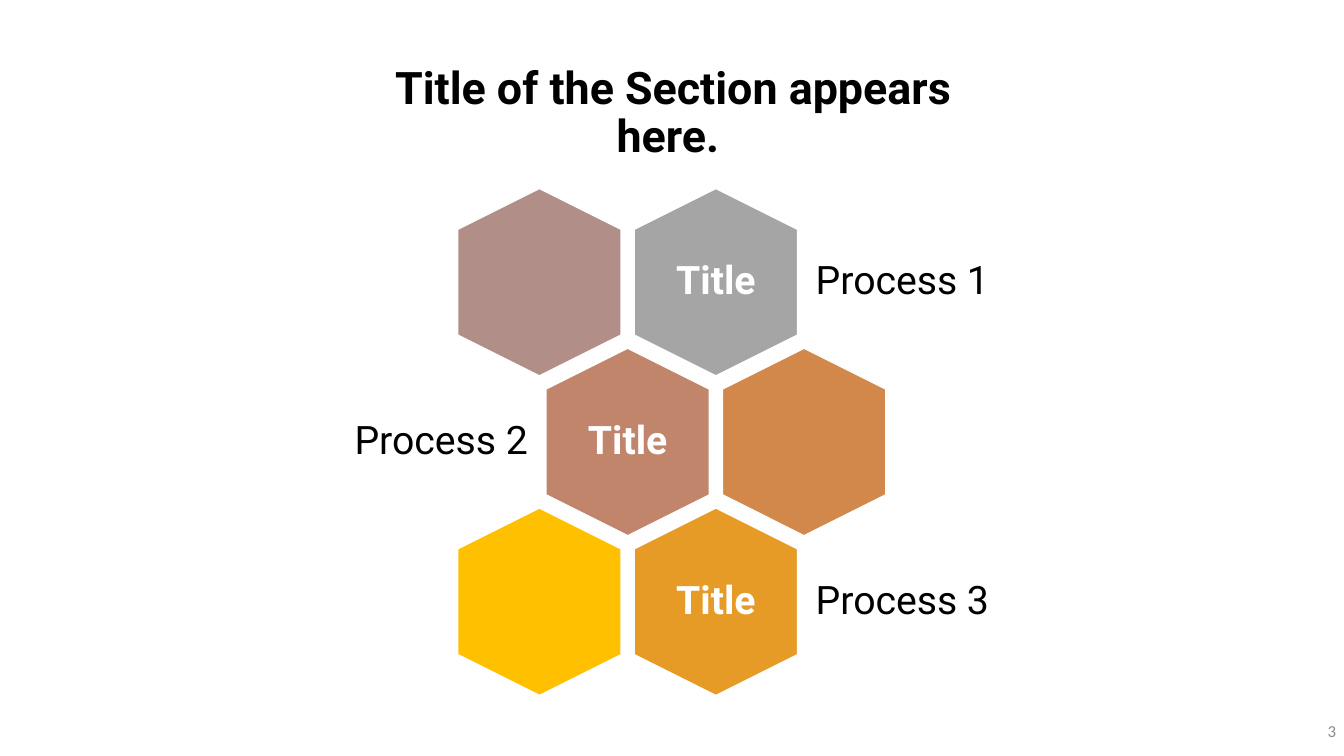
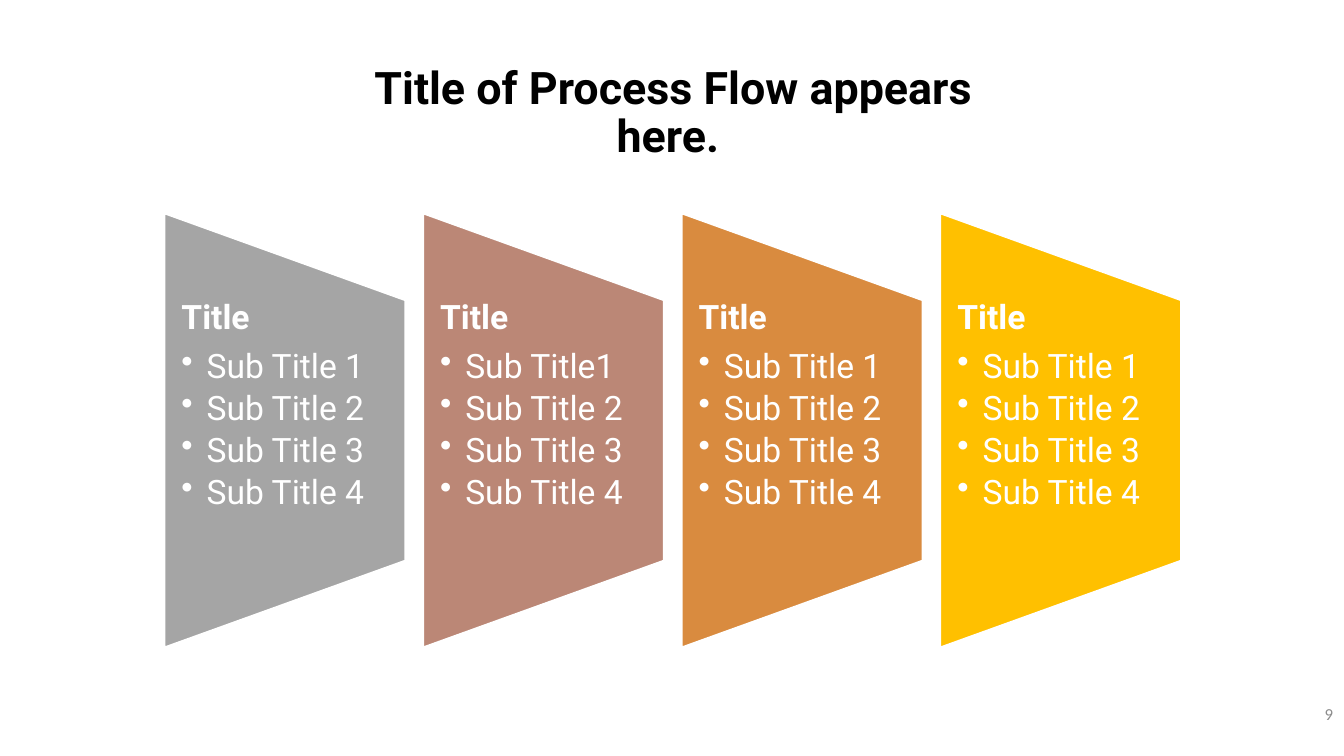
from pptx import Presentation
from pptx.dml.color import RGBColor
from pptx.enum import shapes, text
from pptx.oxml.ns import qn
from pptx.util import Inches, Pt
from lxml import etree

# Shared style
BLACK = RGBColor(0x00, 0x00, 0x00)
WHITE = RGBColor(0xFF, 0xFF, 0xFF)
MUTED = RGBColor(0x8C, 0x8C, 0x8C)
GRAY = RGBColor(0xA5, 0xA5, 0xA5)
MAUVE = RGBColor(0xB1, 0x8F, 0x88)
CLAY = RGBColor(0xC1, 0x85, 0x6C)
ROSE = RGBColor(0xBB, 0x87, 0x76)
COPPER = RGBColor(0xD2, 0x88, 0x4B)
OCHRE = RGBColor(0xD9, 0x8B, 0x3F)
AMBER = RGBColor(0xE7, 0x9B, 0x27)
GOLD = RGBColor(0xFF, 0xC0, 0x00)
FONT = "Roboto"
LEFT, MID, RIGHT = text.PP_ALIGN.LEFT, text.PP_ALIGN.CENTER, text.PP_ALIGN.RIGHT
TOP, CENTER = text.MSO_ANCHOR.TOP, text.MSO_ANCHOR.MIDDLE

# Honeycomb rows: (fill, title, label) for each cell
ROWS = [
    [(MAUVE, "", ""), (GRAY, "Title", "Process 1")],
    [(CLAY, "Title", "Process 2"), (COPPER, "", "")],
    [(GOLD, "", ""), (AMBER, "Title", "Process 3")],
]

# Flow panels: (fill, title, items)
REST = ["Sub Title 2", "Sub Title 3", "Sub Title 4"]
PANELS = [
    (GRAY, "Title", ["Sub Title 1"] + REST),
    (ROSE, "Title", ["Sub Title1"] + REST),
    (OCHRE, "Title", ["Sub Title 1"] + REST),
    (GOLD, "Title", ["Sub Title 1"] + REST),
]


def style(para, size, color, bold=False, align=LEFT, face=FONT, line=0.9):
    para.alignment = align
    para.line_spacing = line
    font = para.font
    font.name, font.size, font.bold = face, Pt(size), bold
    font.color.rgb = color


def add_box(slide, x, y, w, h, anchor=CENTER, pad=(0.12, 0.12)):
    box = slide.shapes.add_textbox(Inches(x), Inches(y), Inches(w), Inches(h))
    frame = box.text_frame
    frame.word_wrap = True
    frame.vertical_anchor = anchor
    frame.margin_left = frame.margin_right = Inches(pad[0])
    frame.margin_top = frame.margin_bottom = Inches(pad[1])
    return frame


def add_text(frame, words, *args, **kw):
    para = frame.paragraphs[0]
    para.text = words
    style(para, *args, **kw)
    return para


def add_turned(slide, kind, cx, cy, w, h, turn, fill, line):
    """Place a turned shape by its centre."""
    shape = slide.shapes.add_shape(
        kind, Inches(cx - w / 2), Inches(cy - h / 2), Inches(w), Inches(h))
    shape.rotation = turn
    shape.shadow.inherit = False
    shape.fill.solid()
    shape.fill.fore_color.rgb = fill
    shape.line.color.rgb = WHITE
    shape.line.width = Pt(line)
    return shape


def add_bullet(para):
    props = para._p.get_or_add_pPr()
    props.set("marL", str(Inches(0.25)))
    props.set("indent", str(-Inches(0.25)))
    etree.SubElement(props, qn("a:buChar"), char="•")


def new_slide(deck, title, number, x, y):
    slide = deck.slides.add_slide(deck.slide_layouts[6])
    frame = add_box(slide, 3.28, 0.6, 6.8, 1.07, TOP, (0.1, 0.05))
    add_text(frame, title, 32, BLACK, True, MID)
    frame = add_box(slide, x, y, 3, 0.4, pad=(0.1, 0.05))
    add_text(frame, number, 12, MUTED, align=RIGHT, face="Calibri", line=1.0)
    return slide


def comb_slide(deck):
    slide = new_slide(deck, "Title of the Section appears here. ", "3", 10.35, 7.05)
    step, drop, gap, wide = 1.75, 1.585, 0.87, 2.08
    for r, row in enumerate(ROWS):
        odd = r % 2
        cy = 2.8 + r * drop
        for c, (fill, title, label) in enumerate(row):
            cx = 5.35 + (c + odd / 2) * step
            cell = add_turned(slide, shapes.MSO_SHAPE.HEXAGON, cx, cy,
                              1.86, 1.62, 90, fill, 1)
            cell.adjustments[0] = 0.25
            if not title:
                continue
            frame = add_box(slide, cx - 0.56, cy - 0.64, 1.12, 1.28)
            add_text(frame, title, 28, WHITE, True, MID)
            # Labels sit on the outer side of the titled cell
            x = cx - gap - wide if odd else cx + gap
            frame = add_box(slide, x, cy - 0.56, wide, 1.12)
            add_text(frame, label, 28, BLACK, align=RIGHT if odd else LEFT)


def flow_slide(deck):
    slide = new_slide(deck, "Title of Process Flow appears here. ", "9", 10.32, 6.88)
    wide, tall, step = 2.39, 4.31, 2.565
    for i, (fill, title, items) in enumerate(PANELS):
        x = 1.63 + i * step
        add_turned(slide, shapes.MSO_SHAPE.FLOWCHART_MANUAL_OPERATION,
                   x + wide / 2, 4.27, tall, wide, 270, fill, 1.5)
        frame = add_box(slide, x, 2.98, wide, 2.59, TOP, (0.17, 0))
        add_text(frame, title, 24, WHITE, True).space_after = Pt(9)
        for item in items:
            para = frame.add_paragraph()
            para.text = item
            add_bullet(para)
            style(para, 24, WHITE)
            para.space_after = Pt(4.2)


def main():
    deck = Presentation()
    deck.slide_width, deck.slide_height = Inches(13.33), Inches(7.5)
    comb_slide(deck)
    flow_slide(deck)
    deck.save("out.pptx")


if __name__ == "__main__":
    main()
